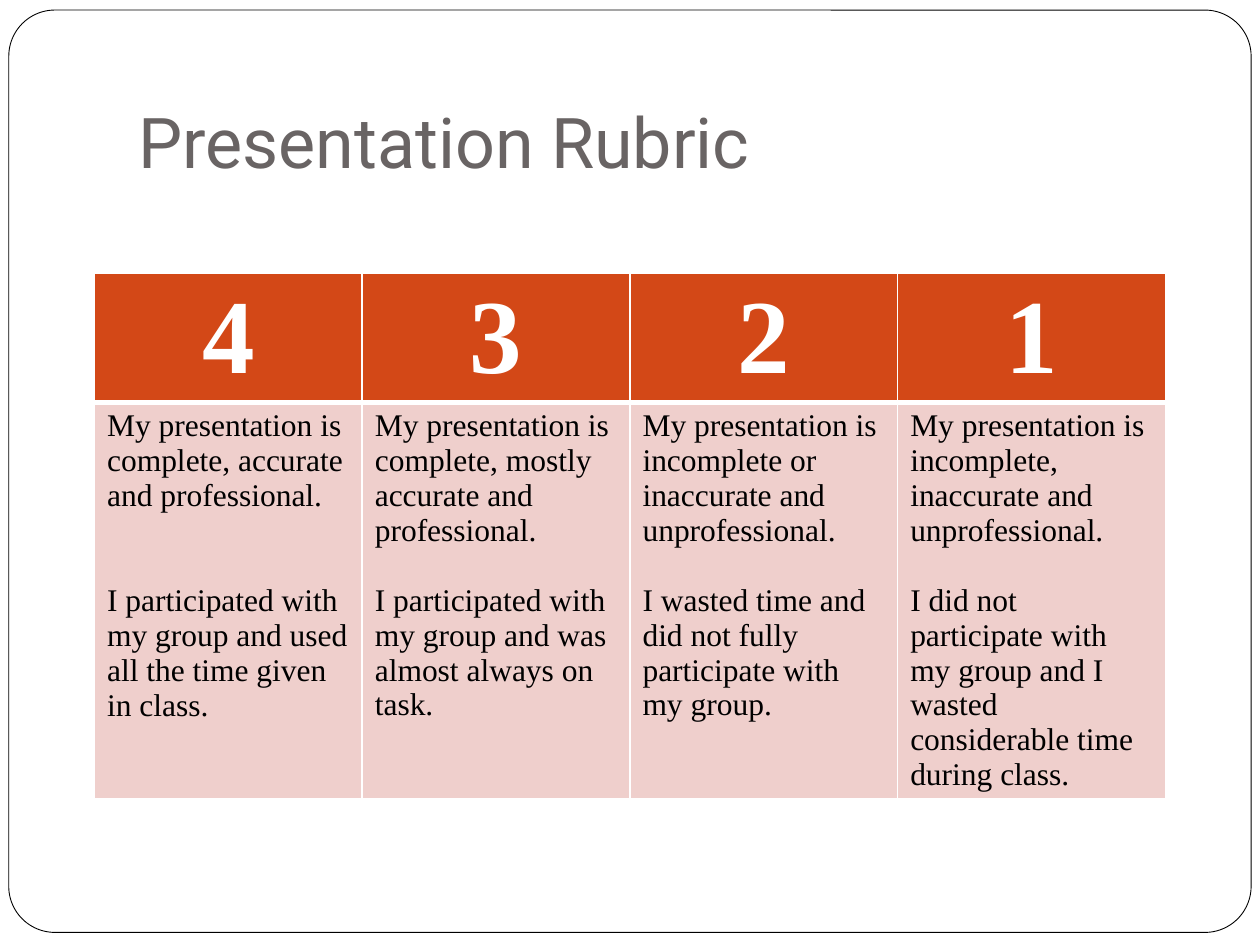
from lxml.etree import SubElement
from pptx import Presentation
from pptx.dml.color import RGBColor
from pptx.enum.shapes import MSO_SHAPE
from pptx.enum.text import MSO_ANCHOR, MSO_AUTO_SIZE, PP_ALIGN
from pptx.oxml.ns import qn
from pptx.util import Inches, Pt


def paint(color, hex_value):
    color.rgb = RGBColor.from_string(hex_value)


def add_white_borders(cell, top, bottom):
    """Draw white cell borders, with side lines of 1 pt."""
    properties = cell._tc.get_or_add_tcPr()
    for side, width in (("L", 1), ("R", 1), ("T", top), ("B", bottom)):
        line = SubElement(properties, qn(f"a:ln{side}"), w=str(Pt(width)))
        fill = SubElement(line, qn("a:solidFill"))
        SubElement(fill, qn("a:srgbClr"), val="FFFFFF")


# Score, presentation criterion, participation criterion, gap between them (pt)
LEVELS = [
    ("4", "My presentation is complete, accurate and professional.",
     "I participated with my group and used all the time given in class.", 40),
    ("3", "My presentation is complete, mostly accurate and professional.",
     "I participated with my group and was almost always on task.", 20),
    ("2", "My presentation is incomplete or inaccurate and unprofessional.",
     "I wasted time and did not fully participate with my group.", 20),
    ("1", "My presentation is incomplete, inaccurate and unprofessional.",
     "I did not participate with my group and I wasted considerable time "
     "during class.", 20),
]

presentation = Presentation()
presentation.slide_width = Inches(10)
presentation.slide_height = Inches(7.5)
slide = presentation.slides.add_slide(presentation.slide_layouts[5])
title = slide.shapes.title

# Rounded frame behind the title
frame = slide.shapes.add_shape(
    MSO_SHAPE.ROUNDED_RECTANGLE,
    Inches(0.07), Inches(0.08), Inches(9.86), Inches(7.32))
frame.adjustments[0] = 0.05
frame.shadow.inherit = False
frame.fill.solid()
paint(frame.fill.fore_color, "FFFFFF")
paint(frame.line.color, "000000")
frame.line.width = Pt(0.5)
title._element.addprevious(frame._element)

# Title
title.left, title.top = Inches(1), Inches(0.3)
title.width, title.height = Inches(8.5), Inches(1.25)
title.text_frame.text = "Presentation Rubric"
title.text_frame.auto_size = MSO_AUTO_SIZE.NONE
title.text_frame.vertical_anchor = MSO_ANCHOR.BOTTOM
title.text_frame.margin_bottom = Inches(0.1)
heading = title.text_frame.paragraphs[0]
heading.alignment = PP_ALIGN.LEFT
heading.font.name = "Roboto"
heading.font.size = Pt(40)
paint(heading.font.color, "696464")

# Rubric table: scores above, criteria below
rubric = slide.shapes.add_table(
    2, len(LEVELS), Inches(0.75), Inches(2.17), Inches(8.5), Inches(4.15)).table
rubric.rows[0].height = Inches(1.02)
rubric.rows[1].height = Inches(3.13)

for column, (score, quality, participation, gap) in enumerate(LEVELS):
    score_cell = rubric.cell(0, column)
    criteria_cell = rubric.cell(1, column)
    score_cell.text = score
    criteria_cell.text = f"{quality}\n{participation}"
    score_cell.text_frame.paragraphs[0].alignment = PP_ALIGN.CENTER
    criteria_cell.text_frame.paragraphs[1].space_before = Pt(gap)
    add_white_borders(score_cell, top=1, bottom=3)
    add_white_borders(criteria_cell, top=3, bottom=1)

    for cell, fill, size, color, bold in (
            (score_cell, "D34817", 60, "FFFFFF", True),
            (criteria_cell, "EFCFCC", 18, "000000", False)):
        cell.fill.solid()
        paint(cell.fill.fore_color, fill)
        for paragraph in cell.text_frame.paragraphs:
            paragraph.font.name = "Times New Roman"
            paragraph.font.size = Pt(size)
            paragraph.font.bold = bold
            paint(paragraph.font.color, color)

presentation.save("out.pptx")
